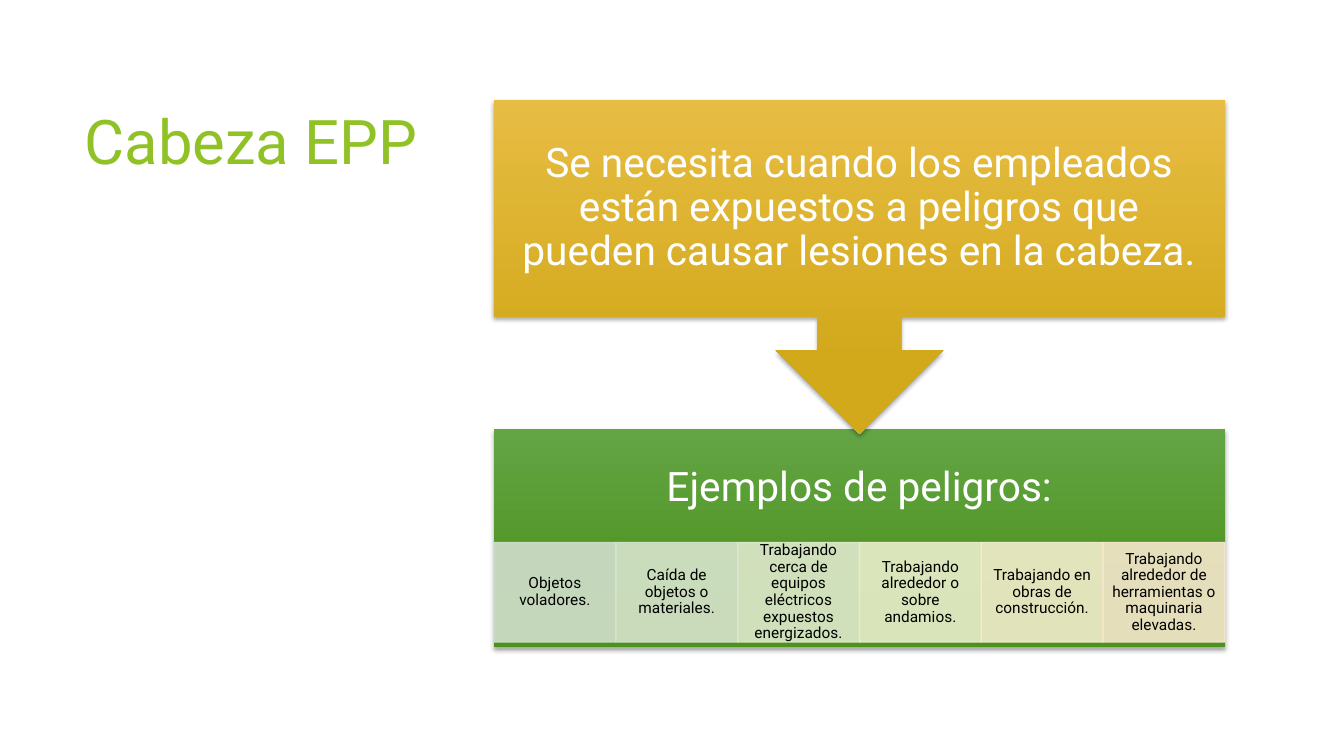
"""Build the slide on head protection and its hazards."""
from lxml.etree import SubElement
from pptx import Presentation
from pptx.dml.color import RGBColor
from pptx.enum.shapes import MSO_SHAPE
from pptx.enum.text import MSO_ANCHOR, PP_ALIGN
from pptx.oxml.ns import qn
from pptx.util import Cm, Pt

WHITE = RGBColor(0xFF, 0xFF, 0xFF)
BLACK = RGBColor(0, 0, 0)
LIME = RGBColor(0x90, 0xC2, 0x26)
GOLD = RGBColor(0xE7, 0xBC, 0x43), RGBColor(0xD2, 0xA9, 0x1B)
GREEN = RGBColor(0x63, 0xA5, 0x45), RGBColor(0x4D, 0x92, 0x1E)
FONT = "Roboto"

TITLE = "Cabeza EPP"
NEED = ("Se necesita cuando los empleados están expuestos a peligros que "
        "pueden causar lesiones en la cabeza.")
HEAD = "Ejemplos de peligros:"
RISKS = [
    ("Objetos voladores.", RGBColor(0xD1, 0xDF, 0xCD)),
    ("Caída de objetos o materiales.", RGBColor(0xD7, 0xE4, 0xCC)),
    ("Trabajando cerca de equipos eléctricos expuestos energizados.",
     RGBColor(0xDF, 0xE9, 0xCC)),
    ("Trabajando alrededor o sobre andamios.", RGBColor(0xEA, 0xEE, 0xCC)),
    ("Trabajando en obras de construcción.", RGBColor(0xF2, 0xED, 0xCC)),
    ("Trabajando alrededor de herramientas o maquinaria elevadas.",
     RGBColor(0xF5, 0xE7, 0xCD)),
]
LEFT, WIDTH = 12.45, 18.42


def write(shape, text, size, color, align=PP_ALIGN.CENTER):
    """Set and format the text of a shape."""
    frame = shape.text_frame
    frame.text = text
    frame.word_wrap = True
    frame.vertical_anchor = MSO_ANCHOR.MIDDLE
    par = frame.paragraphs[0]
    par.alignment = align
    par.line_spacing = 0.9
    font = par.runs[0].font
    font.name, font.size, font.color.rgb = FONT, Pt(size), color


def inset(shape, side, top, low):
    """Set the text margins of a shape in centimetres."""
    frame = shape.text_frame
    frame.margin_left = frame.margin_right = Cm(side)
    frame.margin_top, frame.margin_bottom = Cm(top), Cm(low)


def shade(shape):
    """Add a soft shadow below a shape."""
    props = shape.shadow._element
    cast = SubElement(props.find(qn("a:effectLst")), qn("a:outerShdw"),
                      blurRad=str(Pt(3)), dist=str(Pt(2)), dir="5400000",
                      algn="ctr", rotWithShape="0")
    color = SubElement(cast, qn("a:srgbClr"), val="000000")
    SubElement(color, qn("a:alpha"), val="35000")


def block(slide, kind, top, high, text, colors, low):
    """Add a large block with a gradient and a heading."""
    shape = slide.shapes.add_shape(kind, Cm(LEFT), Cm(top), Cm(WIDTH), Cm(high))
    shape.shadow.inherit = False
    shade(shape)
    shape.line.fill.background()
    shape.fill.gradient()
    shape.fill.gradient_angle = 270
    for stop, color, place in zip(shape.fill.gradient_stops, colors, (0, 0.78)):
        stop.color.rgb, stop.position = color, place
    write(shape, text, 29, WHITE)
    inset(shape, 0.58, 0.58, low)


def cell(slide, left, wide, text, color):
    """Add one translucent hazard cell."""
    shape = slide.shapes.add_shape(MSO_SHAPE.RECTANGLE, Cm(left), Cm(13.67),
                                   Cm(wide), Cm(2.51))
    shape.shadow.inherit = False
    shape.fill.solid()
    shape.fill.fore_color.rgb = color
    shape.line.color.rgb = color
    shape.line.width = Pt(1)
    for tint in shape._element.spPr.iter(qn("a:srgbClr")):
        SubElement(tint, qn("a:alpha"), val="90000")
    write(shape, text, 11, BLACK)
    inset(shape, 0.23, 0.05, 0.05)


def main():
    """Lay out the slide and save it."""
    deck = Presentation()
    deck.slide_width, deck.slide_height = Cm(33.87), Cm(19.05)
    slide = deck.slides.add_slide(deck.slide_layouts[5])
    title = slide.shapes.title
    title.left, title.top = Cm(1.88), Cm(1.7)
    title.width, title.height = Cm(23.88), Cm(3.66)
    write(title, TITLE, 44, LIME, PP_ALIGN.LEFT)
    title.text_frame.paragraphs[0].line_spacing = 1.0

    block(slide, MSO_SHAPE.RECTANGLE, 10.82, 5.49, HEAD, GREEN, 3.12)
    wide = WIDTH / len(RISKS)
    for i, (text, color) in enumerate(RISKS):
        cell(slide, LEFT + i * wide, wide, text, color)
    block(slide, MSO_SHAPE.DOWN_ARROW_CALLOUT, 2.51, 8.43, NEED, GOLD, 0.58)
    deck.save("out.pptx")


if __name__ == "__main__":
    main()
